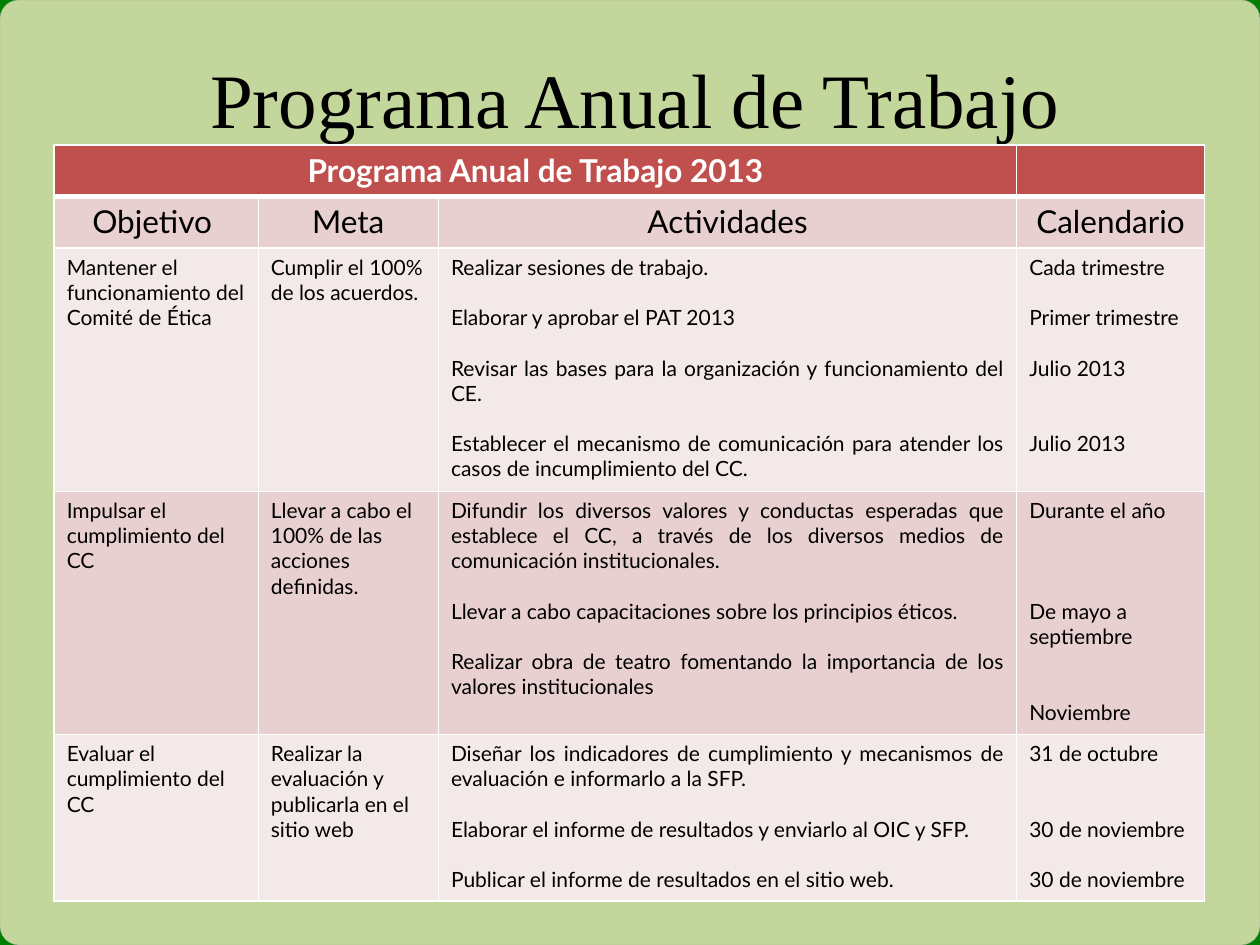
from dataclasses import dataclass

from lxml.etree import SubElement
from pptx import Presentation
from pptx.dml.color import RGBColor
from pptx.enum.shapes import MSO_SHAPE as Shape
from pptx.enum.text import MSO_ANCHOR as Anchor, PP_ALIGN as Align
from pptx.oxml import parse_xml
from pptx.oxml.ns import nsdecls, qn
from pptx.util import Inches, Pt

COLORS = {
    "frame": "008000",
    "panel": "C3D69B",
    "panel_line": "A4A4A4",
    "header": "C0504D",
    "band_dark": "E8D0D0",
    "band_light": "F4E9E9",
    "white": "FFFFFF",
    "black": "000000",
}
TABLE_FONT = "Lato"
TITLE_FONT = "Times New Roman"
LINE_HEIGHT = 14.4  # points, one line of 12-point table text
COLUMN_WIDTHS = (1.62, 1.43, 4.59, 1.49)
ROW_HEIGHTS = (0.41, 0.41, 1.93, 1.93, 1.32)
HEADINGS = ("Objetivo ", "Meta", "Actividades", "Calendario")


@dataclass(frozen=True)
class Entry:
    """A paragraph and the number of free lines above it."""
    text: str
    gap: int = 0


@dataclass(frozen=True)
class Style:
    size: int
    color: str = "black"
    bold: bool = False
    align: Align = Align.LEFT


@dataclass(frozen=True)
class Goal:
    objective: str
    target: str
    activities: tuple[Entry, ...]
    calendar: tuple[Entry, ...]

    def cells(self) -> tuple[tuple[Entry, ...], ...]:
        return (Entry(self.objective),), (Entry(self.target),), self.activities, self.calendar


BANNER = Style(18, "white", True, Align.CENTER)
HEADING = Style(18, align=Align.CENTER)
BODY = Style(12)
JUSTIFIED = Style(12, align=Align.JUSTIFY)

GOALS = (
    Goal(
        "Mantener el funcionamiento del Comité de Ética",
        "Cumplir el 100% de los acuerdos.",
        (
            Entry("Realizar sesiones de trabajo."),
            Entry("Elaborar y aprobar el PAT 2013", 1),
            Entry("Revisar las bases para la organización y funcionamiento del CE.", 1),
            Entry("Establecer el mecanismo de comunicación para atender los casos "
                  "de incumplimiento del CC.", 1),
        ),
        (
            Entry("Cada trimestre"),
            Entry("Primer trimestre", 1),
            Entry("Julio 2013", 1),
            Entry("Julio 2013", 2),
        ),
    ),
    Goal(
        "Impulsar el cumplimiento del CC",
        "Llevar a cabo el 100% de las acciones definidas.",
        (
            Entry("Difundir los diversos valores y conductas esperadas que establece "
                  "el CC, a través de los diversos medios de comunicación institucionales."),
            Entry("Llevar a cabo capacitaciones sobre los principios éticos.", 1),
            Entry("Realizar obra de teatro fomentando la importancia de los valores "
                  "institucionales", 1),
        ),
        (
            Entry("Durante el año"),
            Entry("De mayo a septiembre", 3),
            Entry("Noviembre", 2),
        ),
    ),
    Goal(
        "Evaluar el cumplimiento del CC",
        "Realizar la evaluación y publicarla en el sitio web",
        (
            Entry("Diseñar los indicadores de cumplimiento y mecanismos de evaluación "
                  "e informarlo a la SFP."),
            Entry("Elaborar el informe de resultados y enviarlo al OIC y SFP.", 1),
            Entry("Publicar el informe de resultados en el sitio web.", 1),
        ),
        (
            Entry("31 de octubre"),
            Entry("30 de noviembre", 2),
            Entry("30 de noviembre", 1),
        ),
    ),
)


def rgb(name: str) -> RGBColor:
    return RGBColor.from_string(COLORS[name])


def add_run(paragraph, text: str, style: Style, font_name: str) -> None:
    paragraph.alignment = style.align
    run = paragraph.add_run()
    run.text = text
    run.font.name = font_name
    run.font.size = Pt(style.size)
    run.font.bold = style.bold
    run.font.color.rgb = rgb(style.color)


def set_borders(cell, top: int = 1, bottom: int = 1) -> None:
    properties = cell._tc.get_or_add_tcPr()
    widths = {"lnL": 1, "lnR": 1, "lnT": top, "lnB": bottom}
    for index, (side, width) in enumerate(widths.items()):
        line = parse_xml(f'<a:{side} {nsdecls("a")} w="{Pt(width)}"/>')
        fill = SubElement(line, qn("a:solidFill"))
        SubElement(fill, qn("a:srgbClr"), val=COLORS["white"])
        properties.insert(index, line)


def fill_cell(cell, entries: tuple[Entry, ...], style: Style, fill: str) -> None:
    cell.fill.solid()
    cell.fill.fore_color.rgb = rgb(fill)
    frame = cell.text_frame
    for index, entry in enumerate(entries):
        paragraph = frame.add_paragraph() if index else frame.paragraphs[0]
        if entry.gap:
            paragraph.space_before = Pt(entry.gap * LINE_HEIGHT)
        add_run(paragraph, entry.text, style, TABLE_FONT)


def add_title(slide):
    title = slide.shapes.title
    title.left, title.top = Inches(0.75), Inches(0.28)
    title.width, title.height = Inches(8.58), Inches(1.25)
    frame = title.text_frame
    frame.vertical_anchor = Anchor.TOP
    frame.margin_top = Inches(0.13)
    add_run(frame.paragraphs[0], "Programa Anual de Trabajo",
            Style(44, align=Align.CENTER), TITLE_FONT)
    return title


def add_panel(slide, width: int, height: int):
    panel = slide.shapes.add_shape(Shape.ROUNDED_RECTANGLE, 0, 0, width, height)
    panel.adjustments[0] = 0.02
    panel.shadow.inherit = False
    panel.fill.solid()
    panel.fill.fore_color.rgb = rgb("panel")
    panel.line.color.rgb = rgb("panel_line")
    panel.line.width = Pt(0.16)
    return panel


def add_program_table(slide) -> None:
    table = slide.shapes.add_table(
        len(ROW_HEIGHTS), len(COLUMN_WIDTHS), Inches(0.43), Inches(1.15),
        Inches(sum(COLUMN_WIDTHS)), Inches(sum(ROW_HEIGHTS))).table
    for column, width in zip(table.columns, COLUMN_WIDTHS):
        column.width = Inches(width)
    for row, height in zip(table.rows, ROW_HEIGHTS):
        row.height = Inches(height)

    for row_index, row in enumerate(table.rows):
        for cell in row.cells:
            set_borders(cell, top=3 if row_index == 1 else 1,
                        bottom=3 if row_index == 0 else 1)

    table.cell(0, 0).merge(table.cell(0, 2))
    fill_cell(table.cell(0, 0), (Entry("Programa Anual de Trabajo 2013"),), BANNER, "header")
    fill_cell(table.cell(0, 3), (), BANNER, "header")
    for column_index, heading in enumerate(HEADINGS):
        fill_cell(table.cell(1, column_index), (Entry(heading),), HEADING, "band_dark")
    for row_index, goal in enumerate(GOALS, start=2):
        fill = "band_dark" if row_index % 2 else "band_light"
        styles = (BODY, BODY, JUSTIFIED, BODY)
        for column_index, (entries, style) in enumerate(zip(goal.cells(), styles)):
            fill_cell(table.cell(row_index, column_index), entries, style, fill)


def main() -> None:
    presentation = Presentation()
    presentation.slide_width, presentation.slide_height = Inches(10), Inches(7.5)
    slide = presentation.slides.add_slide(presentation.slide_layouts.get_by_name("Title Only"))
    slide.background.fill.solid()
    slide.background.fill.fore_color.rgb = rgb("frame")
    title = add_title(slide)
    panel = add_panel(slide, presentation.slide_width, presentation.slide_height)
    title.element.addprevious(panel.element)
    add_program_table(slide)
    presentation.save("out.pptx")


if __name__ == "__main__":
    main()
